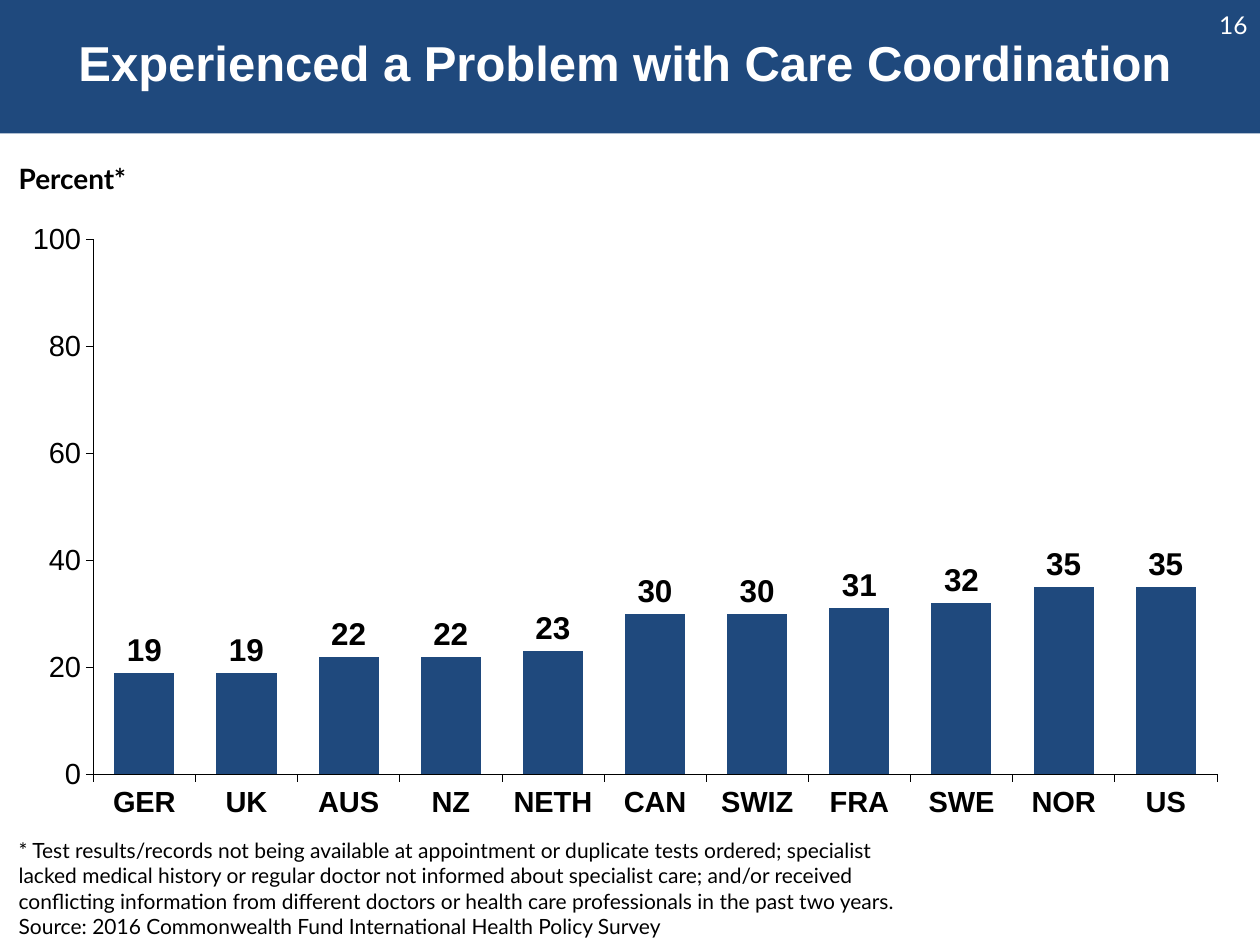
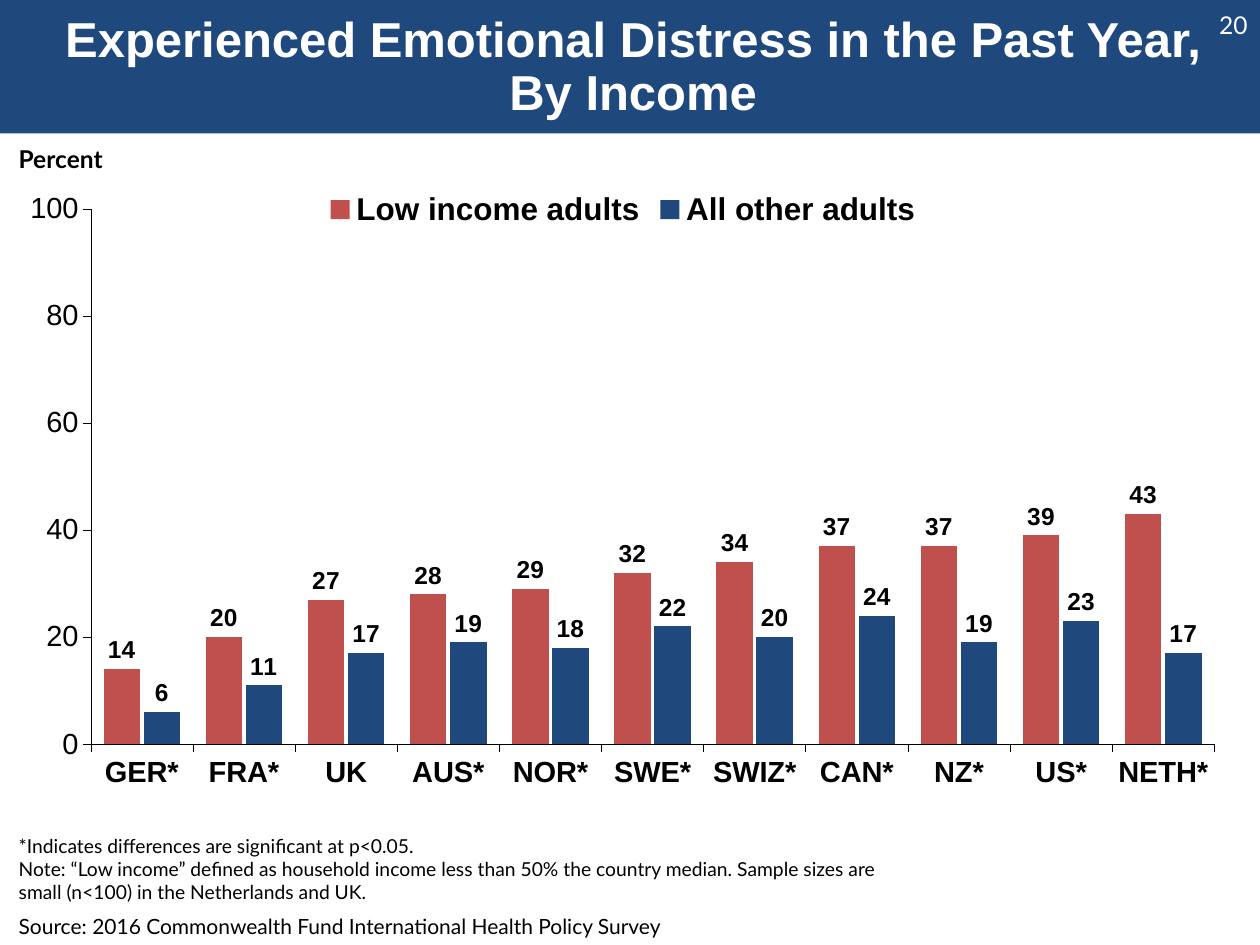
"""Build two survey slides, each with a column chart by country."""
import pptx
import pptx.chart.data
import pptx.dml.color
import pptx.enum.chart
import pptx.enum.shapes
import pptx.enum.text
import pptx.oxml
import pptx.oxml.ns
import pptx.util

WIDTH, HEIGHT = 10, 7.5
BAND_HEIGHT = 1.06
MARGIN = 0.05
COLORS = {"navy": "1F497D", "red": "C0504D", "black": "000000", "white": "FFFFFF"}
SOURCE = "Source: 2016 Commonwealth Fund International Health Policy Survey"
CHART_SIZE = (9.4, 5.18)
PLOT_SHARES = {"x": 0.05, "y": 0.05, "w": 0.95, "h": 0.82}

SLIDES = [
    {
        "number": "16",
        "title": "Experienced a Problem with Care Coordination",
        "title_at": (0, 0.15, 9.92, 0.74),
        "unit": ("Percent*", (MARGIN, 1.23, 8.61, 0.37), 16),
        "notes": (
            ["* Test results/records not being available at appointment or duplicate "
             "tests ordered; specialist lacked medical history or regular doctor not "
             "informed about specialist care; and/or received conflicting information "
             "from different doctors or health care professionals in the past two years."],
            (MARGIN, 6.6, 7.4, 0.71), 12),
        "chart_at": (0.26, 1.64),
        "label_size": 18,
        "countries": ["GER", "UK", "AUS", "NZ", "NETH", "CAN",
                      "SWIZ", "FRA", "SWE", "NOR", "US"],
        "series": [("Series 1", "navy", [19, 19, 22, 22, 23, 30, 30, 31, 32, 35, 35])],
    },
    {
        "number": "20",
        "title": "Experienced Emotional Distress in the Past Year,\vBy Income",
        "title_at": (MARGIN, 0.17, 9.95, 0.74),
        "unit": ("Percent", (MARGIN, 1.09, 1.13, 0.34), 14),
        "notes": (
            ["*Indicates differences are significant at p<0.05.",
             "Note: “Low income” defined as household income less than 50% the country "
             "median. Sample sizes are small (n<100) in the Netherlands and UK."],
            (MARGIN, 6.57, 7.19, 0.66), 11),
        "chart_at": (0.24, 1.4),
        "label_size": 14,
        "countries": ["GER*", "FRA*", "UK", "AUS*", "NOR*", "SWE*",
                      "SWIZ*", "CAN*", "NZ*", "US*", "NETH*"],
        "series": [
            ("Low income adults", "red", [14, 20, 27, 28, 29, 32, 34, 37, 37, 39, 43]),
            ("All other adults", "navy", [6, 11, 17, 19, 18, 22, 20, 24, 19, 23, 17]),
        ],
    },
]


def set_values(target, **values):
    for name, value in values.items():
        setattr(target, name, value)


def inches(lengths):
    return [pptx.util.Inches(length) for length in lengths]


def rgb(color):
    return pptx.dml.color.RGBColor.from_string(COLORS[color])


def set_font(font, size, bold=False, color="black", name="Arial"):
    set_values(font, size=pptx.util.Pt(size), bold=bold, name=name)
    font.color.rgb = rgb(color)


def add_text(page, lines, place, size, bold=False, color="black", **para_format):
    box = page.shapes.add_textbox(*inches(place))
    set_values(box.text_frame, word_wrap=True, text="\n".join(lines))
    for para in box.text_frame.paragraphs:
        set_values(para, **para_format)
        set_font(para.font, size, bold, color, "Lato")
    return box


def add_band(page, layout):
    """Draw the header band and hand it to the layout so every slide shares it."""
    band = page.shapes.add_shape(pptx.enum.shapes.MSO_SHAPE.RECTANGLE,
                                 *inches((0, 0, WIDTH, BAND_HEIGHT)))
    band.shadow.inherit = False
    band.fill.solid()
    band.fill.fore_color.rgb = rgb("navy")
    band.line.fill.background()
    layout.placeholders[0].element.addprevious(band.element)


def format_title(title, text, place):
    set_values(title, **dict(zip(("left", "top", "width", "height"), inches(place))))
    set_values(title.text_frame, text=text, word_wrap=True,
               auto_size=pptx.enum.text.MSO_AUTO_SIZE.NONE,
               vertical_anchor=pptx.enum.text.MSO_ANCHOR.MIDDLE)
    para = title.text_frame.paragraphs[0]
    set_values(para, alignment=pptx.enum.text.PP_ALIGN.CENTER, line_spacing=0.9)
    set_font(para.font, 28, True, "white")


def fix_plot_area(chart):
    plot_area = chart.element.find(".//" + pptx.oxml.ns.qn("c:plotArea"))
    for layout in plot_area.findall(pptx.oxml.ns.qn("c:layout")):
        plot_area.remove(layout)
    shares = "".join(f'<c:{key} val="{share}"/>' for key, share in PLOT_SHARES.items())
    plot_area.insert(0, pptx.oxml.parse_xml(
        f'<c:layout {pptx.oxml.ns.nsdecls("c")}><c:manualLayout>'
        '<c:layoutTarget val="inner"/><c:xMode val="edge"/><c:yMode val="edge"/>'
        f'{shares}</c:manualLayout></c:layout>'))


def add_country_chart(page, content):
    kinds = pptx.enum.chart
    data = pptx.chart.data.CategoryChartData(number_format="0")
    data.categories = content["countries"]
    for name, _, values in content["series"]:
        data.add_series(name, values)
    chart = page.shapes.add_chart(kinds.XL_CHART_TYPE.COLUMN_CLUSTERED,
                                  *inches(content["chart_at"] + CHART_SIZE), data).chart
    set_values(chart, has_title=False, has_legend=len(content["series"]) > 1)
    set_font(chart.font, 11)
    if chart.has_legend:
        set_values(chart.legend, position=kinds.XL_LEGEND_POSITION.TOP,
                   include_in_layout=False)
        set_font(chart.legend.font, 18, True)

    for axis, bold in ((chart.category_axis, True), (chart.value_axis, False)):
        set_values(axis, has_major_gridlines=False,
                   major_tick_mark=kinds.XL_TICK_MARK.OUTSIDE,
                   minor_tick_mark=kinds.XL_TICK_MARK.NONE)
        axis.format.line.color.rgb = rgb("black")
        axis.format.line.width = pptx.util.Pt(0.3)
        set_font(axis.tick_labels.font, 16.6, bold)
    set_values(chart.value_axis, minimum_scale=0, maximum_scale=100, major_unit=20)
    set_values(chart.value_axis.tick_labels, number_format="0",
               number_format_is_linked=False)

    plot = chart.plots[0]
    set_values(plot, gap_width=70, overlap=-10, vary_by_categories=False,
               has_data_labels=True)
    set_values(plot.data_labels, show_value=True, number_format="0",
               number_format_is_linked=False,
               position=kinds.XL_LABEL_POSITION.OUTSIDE_END)
    set_font(plot.data_labels.font, content["label_size"], True)
    for series, (_, color, _) in zip(plot.series, content["series"]):
        series.format.fill.solid()
        series.format.fill.fore_color.rgb = rgb(color)
    fix_plot_area(chart)


def main():
    deck = pptx.Presentation()
    deck.slide_width, deck.slide_height = inches((WIDTH, HEIGHT))
    layout = deck.slide_layouts.get_by_name("Title Only")
    for index, content in enumerate(SLIDES):
        page = deck.slides.add_slide(layout)
        if index == 0:
            add_band(page, layout)
        number = add_text(page, [content["number"]], (7.67, 0, 2.33, 0.4), 14,
                          color="white", alignment=pptx.enum.text.PP_ALIGN.RIGHT)
        number.text_frame.vertical_anchor = pptx.enum.text.MSO_ANCHOR.MIDDLE
        format_title(page.shapes.title, content["title"], content["title_at"])
        add_country_chart(page, content)
        add_text(page, [SOURCE], (MARGIN, 7.2, 8.13, 0.3), 12)
        unit, place, size = content["unit"]
        add_text(page, [unit], place, size, bold=True)
        add_text(page, *content["notes"])
    deck.save("out.pptx")


if __name__ == "__main__":
    main()
